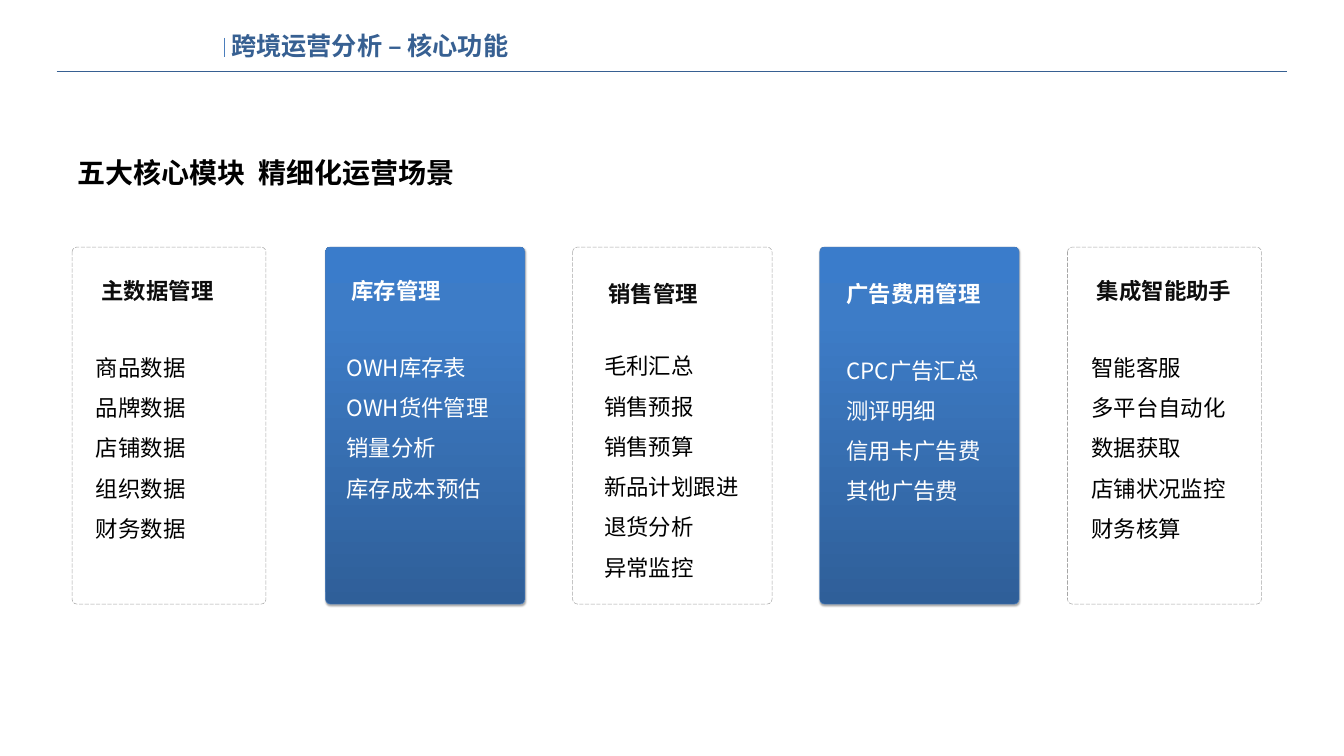
from collections import namedtuple
from copy import deepcopy

from lxml import etree
from pptx import Presentation
from pptx.dml.color import RGBColor
from pptx.enum.dml import MSO_LINE
from pptx.enum.shapes import MSO_CONNECTOR, MSO_SHAPE
from pptx.enum.text import MSO_ANCHOR, MSO_AUTO_SIZE, PP_ALIGN
from pptx.oxml.ns import qn
from pptx.util import Emu, Pt

STRAIGHT = MSO_CONNECTOR.STRAIGHT
ROUNDED = MSO_SHAPE.ROUNDED_RECTANGLE
LONG_DASH = MSO_LINE.LONG_DASH
LEFT = PP_ALIGN.LEFT
MIDDLE, TOP = MSO_ANCHOR.MIDDLE, MSO_ANCHOR.TOP
NO_AUTOFIT = MSO_AUTO_SIZE.NONE

EMU_PER_PX = 12700  # 1920 x 1080 px slide, 1 px = 1 pt
FONT = "Noto Sans CJK SC"
NAVY = RGBColor(0x37, 0x60, 0x92)
BLUE = RGBColor(0x4B, 0x7E, 0xBC)
GREY = RGBColor(0xA6, 0xA6, 0xA6)
BLACK = RGBColor(0x00, 0x00, 0x00)
INK = RGBColor(0x0D, 0x0D, 0x0D)
WHITE = RGBColor(0xFF, 0xFF, 0xFF)
GRADIENT = [
    (0, RGBColor(0x2F, 0x5F, 0x99)),
    (0.8, RGBColor(0x3D, 0x7C, 0xC7)),
    (1, RGBColor(0x3A, 0x7C, 0xCB)),
]

CARD_TOP, CARD_HEIGHT = 353, 510
TEXT_SIZE = 32
HEADING_PITCH, LIST_PITCH = 39, 57.5

# Boxes are (left, top, width); heading width follows from its length
Card = namedtuple("Card", "left width filled heading heading_at items list_box")
CARDS = [
    Card(103, 277, False, "主数据管理", (138, 391),
         ["商品数据", "品牌数据", "店铺数据", "组织数据", "财务数据"], (130, 483, 266)),
    Card(465, 285, True, "库存管理", (495, 391),
         ["OWH库存表", "OWH货件管理", "销量分析", "库存成本预估"], (488, 483, 250)),
    Card(818, 285, False, "销售管理", (862, 396),
         ["毛利汇总", "销售预报", "销售预算", "新品计划跟进", "退货分析", "异常监控"],
         (856, 481, 247)),
    Card(1171, 285, True, "广告费用管理", (1202, 396),
         ["CPC广告汇总", "测评明细", "信用卡广告费", "其他广告费"], (1202, 487, 253)),
    Card(1525, 277, False, "集成智能助手", (1560, 391),
         ["智能客服", "多平台自动化", "数据获取", "店铺状况监控", "财务核算"],
         (1552, 483, 266)),
]


def px(value):
    return Emu(round(value * EMU_PER_PX))


def format_paragraph(paragraph, size, color, bold=False, pitch=None):
    paragraph.alignment = LEFT
    if pitch:
        paragraph.line_spacing = Pt(pitch)
    font = paragraph.font
    font.size = Pt(size)
    font.bold = bold
    font.color.rgb = color
    font.name = FONT
    properties = paragraph._p.pPr.find(qn("a:defRPr"))
    etree.SubElement(properties, qn("a:ea"), typeface=FONT)


def add_text(shapes, box, lines, size, color, pitch, bold=False, wrap=True):
    text_box = shapes.add_textbox(*map(px, box))
    frame = text_box.text_frame
    frame.word_wrap = wrap
    frame.auto_size = NO_AUTOFIT
    frame.vertical_anchor = TOP
    for index, line in enumerate(lines):
        paragraph = frame.add_paragraph() if index else frame.paragraphs[0]
        paragraph.text = line
        format_paragraph(paragraph, size, color, bold, pitch)


def add_line(slide, start, end, color):
    line = slide.shapes.add_connector(STRAIGHT, *map(px, start + end))
    line.line.color.rgb = color
    line.line.width = Pt(1)
    etree.SubElement(line._element.spPr, qn("a:effectLst"))


def set_title(slide, box, text):
    title = slide.shapes.title
    title.left, title.top, title.width, title.height = map(px, box)
    frame = title.text_frame
    frame.text = text
    frame.auto_size = NO_AUTOFIT
    frame.vertical_anchor = MIDDLE
    format_paragraph(frame.paragraphs[0], 36, NAVY, bold=True)


def fill_gradient(shape):
    shape.fill.gradient()
    shape.fill.gradient_angle = 90
    stop_list = shape._element.spPr.find(".//" + qn("a:gsLst"))
    stop_list.append(deepcopy(stop_list[-1]))
    for stop, (position, color) in zip(shape.fill.gradient_stops, GRADIENT):
        stop.position = position
        stop.color.rgb = color


def add_shadow(shape):
    effects = shape._element.spPr.find(qn("a:effectLst"))
    shadow = etree.SubElement(
        effects, qn("a:outerShdw"), blurRad=str(Pt(3.1)), dist=str(Pt(1.8)),
        dir="5400000", rotWithShape="0")
    color = etree.SubElement(shadow, qn("a:srgbClr"), val=str(BLACK))
    etree.SubElement(color, qn("a:alpha"), val="35000")


def add_card(slide, card):
    shapes = slide.shapes.add_group_shape().shapes

    # Panel
    panel = shapes.add_shape(
        ROUNDED, *map(px, (card.left, CARD_TOP, card.width, CARD_HEIGHT)))
    panel.adjustments[0] = 0.025
    panel.shadow.inherit = False
    panel.line.width = Pt(0.75)
    if card.filled:
        fill_gradient(panel)
        add_shadow(panel)
        panel.line.color.rgb = BLUE
    else:
        panel.fill.background()
        panel.line.color.rgb = GREY
        panel.line.dash_style = LONG_DASH

    # Heading and list
    heading_box = (*card.heading_at, len(card.heading) * TEXT_SIZE + 14, 46)
    add_text(shapes, heading_box, [card.heading], TEXT_SIZE,
             WHITE if card.filled else INK, HEADING_PITCH, bold=True, wrap=False)
    list_box = (*card.list_box, len(card.items) * LIST_PITCH + 8)
    add_text(shapes, list_box, card.items, TEXT_SIZE,
             WHITE if card.filled else BLACK, LIST_PITCH)


def main():
    presentation = Presentation()
    presentation.slide_width, presentation.slide_height = px(1920), px(1080)
    slide = presentation.slides.add_slide(presentation.slide_layouts[5])

    # Header
    add_line(slide, (81, 102), (1839, 102), NAVY)
    add_line(slide, (321, 54), (321, 81), BLUE)
    set_title(slide, (323, 37, 1521, 57), "跨境运营分析 – 核心功能")

    # Module cards
    for card in CARDS:
        add_card(slide, card)

    # Section heading
    add_text(slide.shapes, (104, 217, 584, 55), ["五大核心模块  精细化运营场景"],
             40, BLACK, 49, bold=True)

    presentation.save("out.pptx")


if __name__ == "__main__":
    main()
